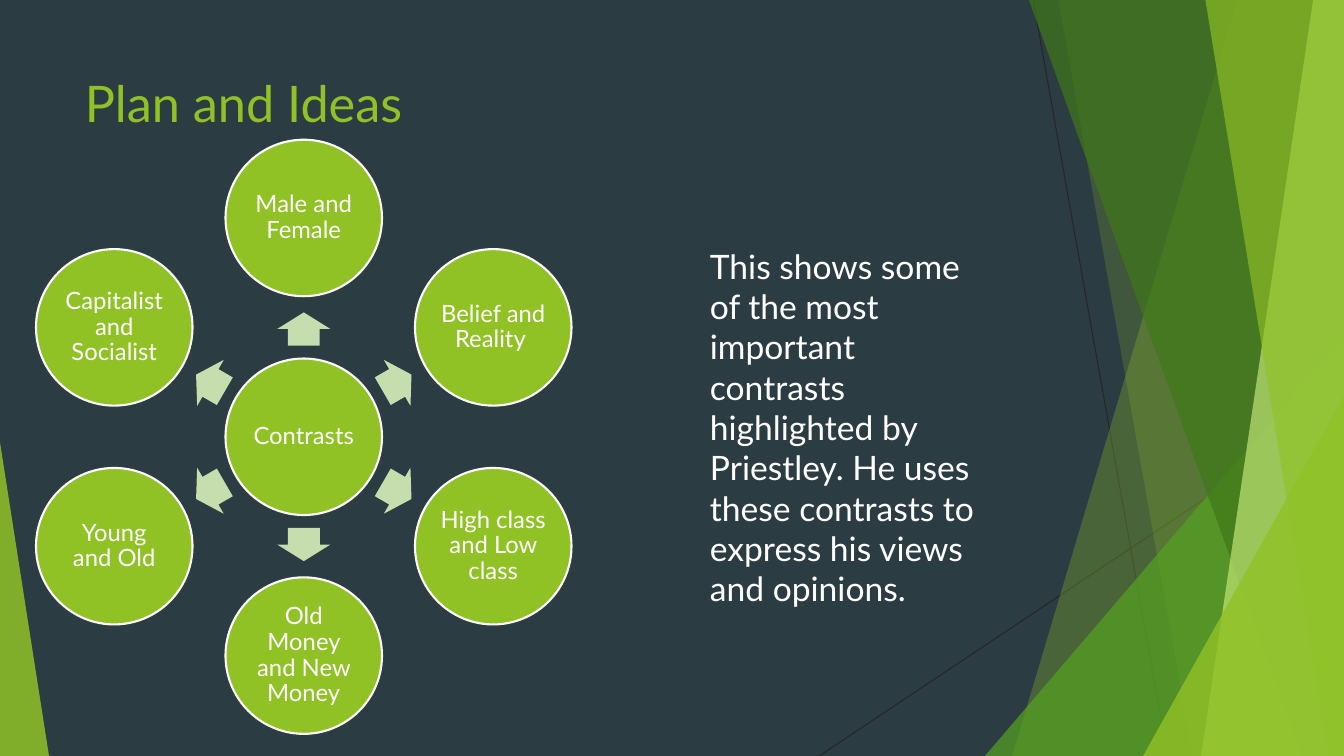
from math import cos, radians, sin

from lxml import etree
from pptx import Presentation
from pptx.dml.color import RGBColor
from pptx.enum.shapes import MSO_CONNECTOR, MSO_SHAPE
from pptx.enum.text import MSO_ANCHOR, MSO_AUTO_SIZE, PP_ALIGN
from pptx.oxml.ns import qn
from pptx.util import Pt

STRAIGHT = MSO_CONNECTOR.STRAIGHT
TRIANGLE, OVAL, ARROW = MSO_SHAPE.ISOSCELES_TRIANGLE, MSO_SHAPE.OVAL, MSO_SHAPE.RIGHT_ARROW
TOP, MIDDLE = MSO_ANCHOR.TOP, MSO_ANCHOR.MIDDLE
LEFT, CENTER = PP_ALIGN.LEFT, PP_ALIGN.CENTER
GROW = MSO_AUTO_SIZE.SHAPE_TO_FIT_TEXT

SLATE = RGBColor(0x2C, 0x3C, 0x43)
CHARCOAL = RGBColor(0x26, 0x26, 0x26)
LIME = RGBColor(0x90, 0xC2, 0x26)
GREEN = RGBColor(0x54, 0xA0, 0x21)
FOREST = RGBColor(0x3F, 0x78, 0x19)
PALE_LIME = RGBColor(0xC0, 0xE4, 0x74)
SAGE = RGBColor(0xC6, 0xDD, 0xAD)
WHITE = RGBColor(0xFF, 0xFF, 0xFF)

W, H = 960, 540


def write(s, text, size=17, color=WHITE, align=LEFT, anchor=TOP, inset=None, spacing=None):
    tf = s.text_frame
    tf.word_wrap = True
    tf.vertical_anchor = anchor
    if inset is not None:
        tf.margin_left = tf.margin_right = tf.margin_top = tf.margin_bottom = Pt(inset)
    p = tf.paragraphs[0]
    p.alignment = align
    p.line_spacing = spacing
    r = p.add_run()
    r.text = text
    r.font.name = "Lato"
    r.font.size = Pt(size)
    r.font.color.rgb = color


def paint(s, color, opacity=100):
    s.shadow.inherit = False
    s.fill.solid()
    s.fill.fore_color.rgb = color
    s.line.fill.background()
    if opacity < 100:
        clr = s.fill._xPr.find(qn("a:solidFill"))[0]
        etree.SubElement(clr, qn("a:alpha")).set("val", str(opacity * 1000))


prs = Presentation()
prs.slide_width, prs.slide_height = Pt(W), Pt(H)
slide = prs.slides.add_slide(prs.slide_layouts[6])
slide.background.fill.solid()
slide.background.fill.fore_color.rgb = SLATE
shapes = slide.shapes

for x1, y1, x2, y2 in [(738, 0, 834, H), (W, 290, 585, H)]:
    s = shapes.add_connector(STRAIGHT, Pt(x1), Pt(y1), Pt(x2), Pt(y2))
    s.line.color.rgb = CHARCOAL
    s.line.width = Pt(0.75)
    etree.SubElement(s._element.spPr, qn("a:effectLst"))

facets = [
    ("band", (884, 723), LIME, 30),
    ("band", (756, 852), LIME, 20),
    ("corner", (703.5, 240, 256.5, 1), GREEN, 72),
    ("band", (735, 929.5), FOREST, 70),
    ("band", (938, 858), PALE_LIME, 70),
    ("band", (861, 949), LIME, 65),
    ("corner", (816.5, 283, 143.5, 1), LIME, 80),
    ("corner", (0, 316, 35, 0), LIME, 85),
]
for kind, geometry, color, opacity in facets:
    if kind == "band":
        top_x, bottom_x = geometry
        outline = shapes.build_freeform(top_x, 0, scale=Pt(1))
        outline.add_line_segments([(W, 0), (W, H), (bottom_x, H)], close=True)
        s = outline.convert_to_shape()
    else:
        x, y, width, apex = geometry
        s = shapes.add_shape(TRIANGLE, Pt(x), Pt(y), Pt(width), Pt(H - y))
        s.adjustments[0] = apex
    paint(s, color, opacity)

s = shapes.add_textbox(Pt(53.5), Pt(48), Pt(677), Pt(104))
write(s, "Plan and Ideas", size=36, color=LIME)

HUB_X, HUB_Y = 217, 312
ORBIT, ARROW_ORBIT = 156.3, 77
DIAMETER = 111.8
ARROW_W, ARROW_H = 23.7, 38
contrasts = [
    "Male and Female",
    "Belief and Reality ",
    "High class and Low class",
    "Old Money and New Money",
    "Young and Old",
    "Capitalist and Socialist",
]
circles = [("Contrasts", HUB_X, HUB_Y)]
for i, text in enumerate(contrasts):
    angle = (270 + i * 60) % 360
    dx, dy = cos(radians(angle)), sin(radians(angle))
    circles.append((text, HUB_X + ORBIT * dx, HUB_Y + ORBIT * dy))
    s = shapes.add_shape(ARROW, Pt(HUB_X + ARROW_ORBIT * dx - ARROW_W / 2),
                         Pt(HUB_Y + ARROW_ORBIT * dy - ARROW_H / 2), Pt(ARROW_W), Pt(ARROW_H))
    s.adjustments[0], s.adjustments[1] = 0.6, 0.5
    s.rotation = angle
    paint(s, SAGE)

for text, x, y in circles:
    s = shapes.add_shape(OVAL, Pt(x - DIAMETER / 2), Pt(y - DIAMETER / 2), Pt(DIAMETER), Pt(DIAMETER))
    paint(s, LIME)
    s.line.color.rgb = WHITE
    s.line.width = Pt(1.5)
    write(s, text, align=CENTER, anchor=MIDDLE, inset=1.5, spacing=0.9)

s = shapes.add_textbox(Pt(500), Pt(172), Pt(214), Pt(269))
write(s, "This shows some of the most important contrasts highlighted by Priestley. "
         "He uses these contrasts to express his views and opinions.", size=24)
s.text_frame.auto_size = GROW

prs.save("out.pptx")
